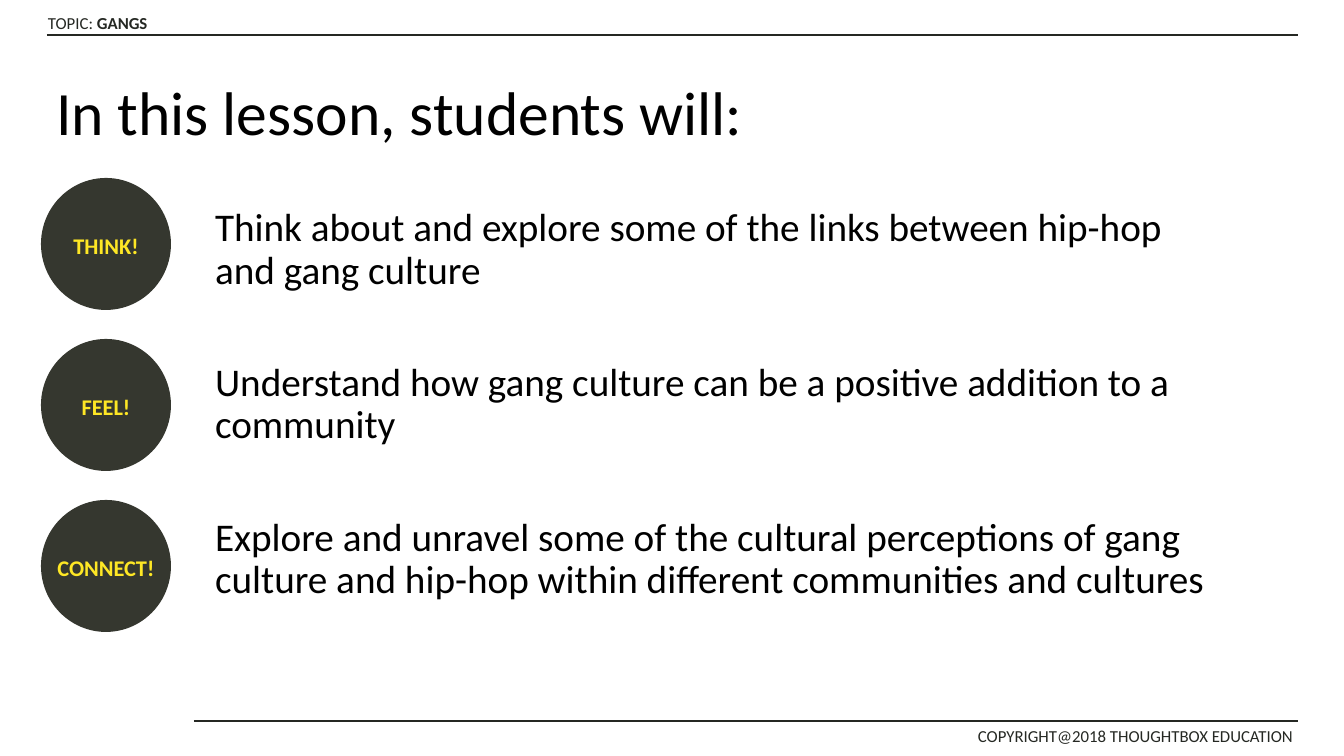
from lxml import etree
from pptx import Presentation
from pptx.dml.color import RGBColor
from pptx.enum.shapes import MSO_CONNECTOR, MSO_SHAPE
from pptx.enum.text import MSO_ANCHOR, MSO_AUTO_SIZE, PP_ALIGN
from pptx.oxml.ns import qn
from pptx.util import Pt

TITLE = "In this lesson, students will:"
AIMS = [
    ("THINK!", "Think about and explore some of the links between hip-hop and gang culture"),
    ("FEEL!", "Understand how gang culture can be a positive addition to a community"),
    ("CONNECT!", "Explore and unravel some of the cultural perceptions of gang culture "
                 "and hip-hop within different communities and cultures"),
]
TOPIC = [("TOPIC: ", False), ("GANGS", True)]
COPYRIGHT = [("COPYRIGHT@2018 THOUGHTBOX EDUCATION", False)]
RULES = [(47, 1298, 35), (194, 1298, 721)]  # left, right, y

FONT = "Calibri"
BLACK, INK, DARK, YELLOW = "000000", "252823", "35372F", "FEE725"
PAGE_WIDTH, PAGE_HEIGHT = 1344, 756
EMU_PER_PX = 12192000 / PAGE_WIDTH
CIRCLE_LEFT, CIRCLE_TOP, CIRCLE_WIDTH, CIRCLE_HEIGHT = 41, 178, 130, 132
CIRCLE_PITCH = 161
AIM_GAP = 50  # points between aims

LEFT, CENTER = PP_ALIGN.LEFT, PP_ALIGN.CENTER
TOP, MIDDLE = MSO_ANCHOR.TOP, MSO_ANCHOR.MIDDLE
NO_AUTOFIT = MSO_AUTO_SIZE.NONE
OVAL, STRAIGHT = MSO_SHAPE.OVAL, MSO_CONNECTOR.STRAIGHT


def px(*lengths):
    return [round(length * EMU_PER_PX) for length in lengths]


def color(hex_value):
    return RGBColor.from_string(hex_value)


def style(para, size, hex_value, align=LEFT, spacing=1.0):
    para.alignment = align
    para.line_spacing = spacing
    para.font.name = FONT
    para.font.size = Pt(size)
    para.font.color.rgb = color(hex_value)


def place(shape, left, top, width, height, anchor):
    shape.left, shape.top, shape.width, shape.height = px(left, top, width, height)
    frame = shape.text_frame
    frame.auto_size = NO_AUTOFIT
    frame.word_wrap = True
    frame.vertical_anchor = anchor
    return frame


def add_label(page, spans, left, top, width, height):
    frame = page.shapes.add_textbox(*px(left, top, width, height)).text_frame
    frame.word_wrap = False
    para = frame.paragraphs[0]
    for text, bold in spans:
        span = para.add_run()
        span.text = text
        span.font.bold = bold
    style(para, 12, INK)


def add_rule(page, left, right, y):
    rule = page.shapes.add_connector(STRAIGHT, *px(left, y, right, y))
    rule.line.color.rgb = color(INK)
    rule.line.width = Pt(1)
    etree.SubElement(rule._element.spPr, qn("a:effectLst"))


def add_circle(page, word, top):
    circle = page.shapes.add_shape(OVAL, *px(CIRCLE_LEFT, top, CIRCLE_WIDTH, CIRCLE_HEIGHT))
    circle.shadow.inherit = False
    circle.fill.solid()
    circle.fill.fore_color.rgb = color(DARK)
    circle.line.fill.background()
    frame = circle.text_frame
    frame.word_wrap = False
    frame.vertical_anchor = MIDDLE
    para = frame.paragraphs[0]
    para.text = word
    style(para, 16, YELLOW, CENTER, 1.15)
    para.font.bold = True


def fill_aims(frame):
    for index, (_, aim) in enumerate(AIMS):
        para = frame.paragraphs[0] if index == 0 else frame.add_paragraph()
        para.text = aim
        properties = para._p.get_or_add_pPr()
        properties.set("marL", "0")
        properties.set("indent", "0")
        etree.SubElement(properties, qn("a:buNone"))
        style(para, 28, BLACK, spacing=0.9)
        para.space_before = Pt(AIM_GAP if index else 0)


def main():
    deck = Presentation()
    deck.slide_width, deck.slide_height = px(PAGE_WIDTH, PAGE_HEIGHT)
    page = deck.slides.add_slide(deck.slide_layouts[1])

    add_label(page, TOPIC, 38, 8, 124, 30)
    add_label(page, COPYRIGHT, 968, 721, 343, 31)
    for rule in RULES:
        add_rule(page, *rule)

    title = place(page.shapes.title, 46, 50, 1252, 131, MIDDLE)
    title.text = TITLE
    style(title.paragraphs[0], 44, BLACK, spacing=0.9)
    fill_aims(place(page.placeholders[1], 205, 203, 1015, 480, TOP))

    for index, (word, _) in enumerate(AIMS):
        add_circle(page, word, CIRCLE_TOP + index * CIRCLE_PITCH)

    deck.save("out.pptx")


if __name__ == "__main__":
    main()
